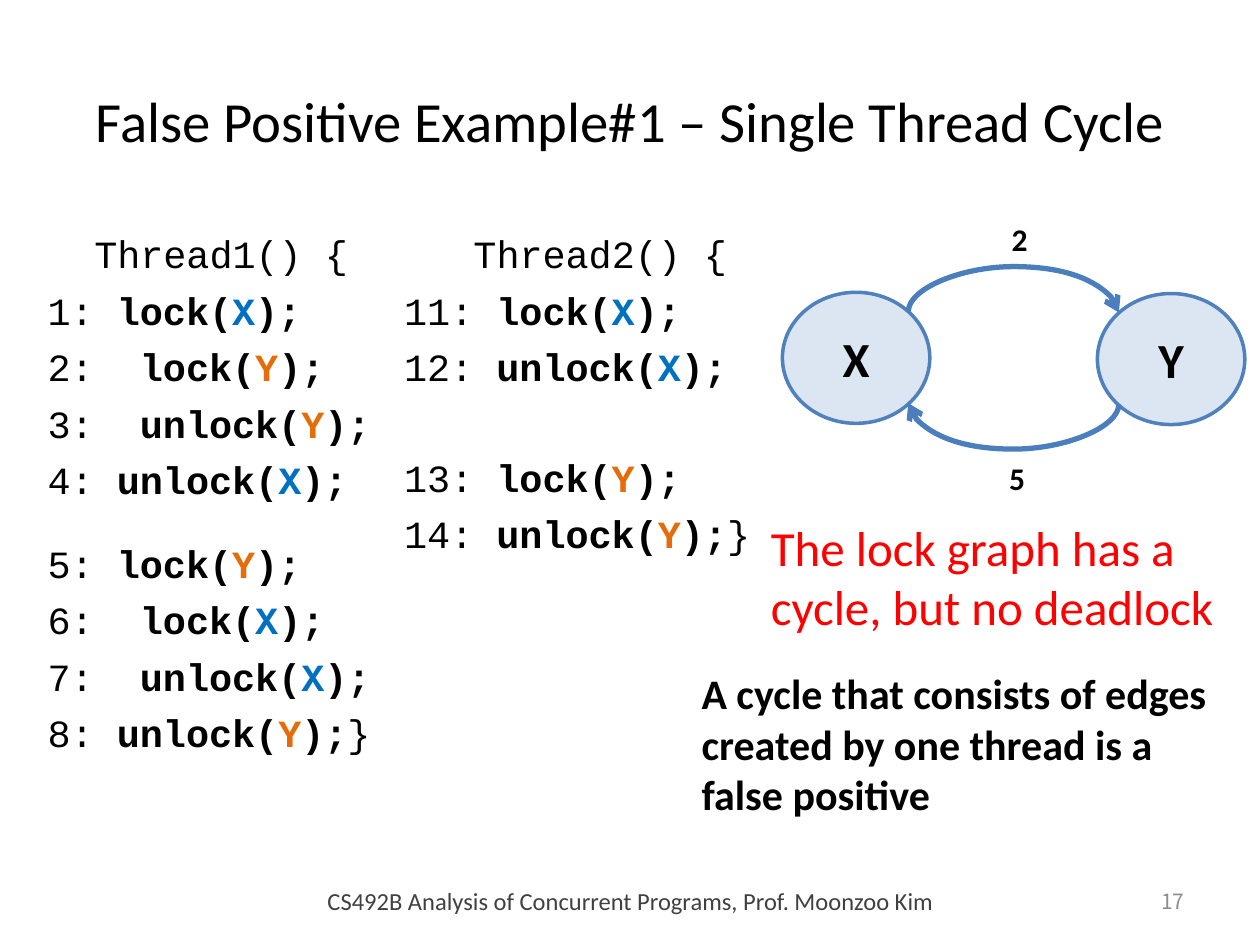
"""Build the slide on a false positive caused by a single-thread lock cycle."""
import pptx
import pptx.util
import pptx.dml.color
import pptx.enum.shapes
import pptx.enum.text
import pptx.oxml
import pptx.oxml.ns

Inches = pptx.util.Inches
Pt = pptx.util.Pt
Align = pptx.enum.text.PP_ALIGN
Anchor = pptx.enum.text.MSO_ANCHOR
Kind = pptx.enum.shapes.MSO_SHAPE
hue = pptx.dml.color.RGBColor.from_string


def write(para, text, color="000000", **form):
    """Add a run with the given font values."""
    run = para.add_run()
    run.text = text
    run.font.color.rgb = hue(color)
    for key, val in {"name": "Calibri", "bold": False, **form}.items():
        setattr(run.font, key, val)


def frame(shape, **form):
    """Set up a text frame and return its first paragraph."""
    text = shape.text_frame
    for key, val in {"word_wrap": True, **form}.items():
        setattr(text, key, val)
    return text.paragraphs[0]


deck = pptx.Presentation()
deck.slide_width, deck.slide_height = Inches(10), Inches(7.5)
slide = deck.slides.add_slide(deck.slide_layouts[5])
shapes = slide.shapes

title = shapes.title
place = {"left": 0.5, "top": 0.6, "width": 9, "height": 0.71}
for key, val in place.items():
    setattr(title, key, Inches(val))
para = frame(title, vertical_anchor=Anchor.MIDDLE,
             auto_size=pptx.enum.text.MSO_AUTO_SIZE.NONE)
para.alignment = Align.CENTER
write(para, "False Positive Example#1 – Single Thread Cycle", size=Pt(32.4))

tints = {"X": "0070C0", "Y": "E46C0A"}
threads = [
    (0.28, 3.15, "Thread1() {", 0.37, {"5": 21.3},
     ["1: lock(X);", "2:  lock(Y);", "3:  unlock(Y);", "4: unlock(X);",
      "5: lock(Y);", "6:  lock(X);", "7:  unlock(X);", "8: unlock(Y);}"]),
    (3.11, 3.2, "Thread2() {", 0.55, {"13": 36.8},
     ["11: lock(X);", "12: unlock(X);", "13: lock(Y);", "14: unlock(Y);}"]),
]
mono = {"name": "Courier New", "size": Pt(22)}
for left, width, head, dent, gaps, lines in threads:
    code = shapes.add_textbox(Inches(left), Inches(1.78), Inches(width), Inches(4.84))
    para = frame(code)
    para.space_before = Pt(5.9)
    para._p.get_or_add_pPr().set("marL", str(Inches(dent)))
    write(para, head, **mono)
    for line in lines:
        num, call = line.split(":")
        verb, rest = call.split("(")
        para = code.text_frame.add_paragraph()
        para.space_before = Pt(gaps.get(num, 5.9))
        write(para, num + ":", **mono)
        write(para, verb + "(", **{**mono, "bold": True})
        write(para, rest[0], tints[rest[0]], **{**mono, "bold": True})
        write(para, ");", **{**mono, "bold": True})
        if rest.endswith("}"):
            write(para, "}", **mono)

for name, left, top in [("X", 6.21, 2.32), ("Y", 8.71, 2.33)]:
    node = shapes.add_shape(Kind.OVAL, Inches(left), Inches(top), Inches(1.17), Inches(1.04))
    node.shadow.inherit = False
    node.fill.solid()
    node.fill.fore_color.rgb = hue("DCE6F2")
    node.line.color.rgb = hue("4F81BD")
    node.line.width = Pt(2)
    para = frame(node, vertical_anchor=Anchor.MIDDLE)
    para.alignment = Align.CENTER
    write(para, name, size=Pt(28), bold=True)

for top, turn in [(1.64, 270), (2.37, 90)]:
    edge = shapes.add_connector(
        pptx.enum.shapes.MSO_CONNECTOR.CURVE,
        Inches(8.05), Inches(top), Inches(8.04), Inches(top + 1.67))
    edge.line.color.rgb = hue("4B7EBC")
    edge.line.width = Pt(3)
    prop = edge._element.spPr
    prop.xfrm.set("rot", str(turn * 60000))
    guide = pptx.oxml.parse_xml(
        f'<a:gd {pptx.oxml.ns.nsdecls("a")} name="adj1" fmla="val -3600000"/>')
    prop.prstGeom.get_or_add_avLst().append(guide)
    edge.line._get_or_add_ln().append(pptx.oxml.parse_xml(
        f'<a:tailEnd {pptx.oxml.ns.nsdecls("a")} type="arrow"/>'))
    prop.append(pptx.oxml.parse_xml(f'<a:effectLst {pptx.oxml.ns.nsdecls("a")}/>'))

bold = {"bold": True}
notes = [
    (7.93, 1.7, 0.43, 0.4, "2", 18, "000000", bold, Align.LEFT, Anchor.TOP),
    (7.91, 3.59, 0.75, 0.4, "5", 18, "000000", bold, Align.LEFT, Anchor.TOP),
    (6.02, 4.06, 3.94, 1.04, "The lock graph has a cycle, but no deadlock",
     28, "FF0000", {}, Align.LEFT, Anchor.TOP),
    (5.47, 5.25, 4.37, 1.31,
     "A cycle that consists of edges created by one thread is a false positive",
     24, "000000", bold, Align.LEFT, Anchor.TOP),
    (8.46, 6.95, 1.04, 0.4, "17", 12, "8C8C8C",
     {"name": "Noto Sans CJK KR"}, Align.RIGHT, Anchor.MIDDLE),
    (2.09, 6.95, 5.83, 0.4, "CS492B Analysis of Concurrent Programs, Prof. Moonzoo Kim",
     14, "404040", {}, Align.CENTER, Anchor.MIDDLE),
]
for left, top, width, height, text, size, color, form, align, anchor in notes:
    note = shapes.add_textbox(Inches(left), Inches(top), Inches(width), Inches(height))
    para = frame(note, vertical_anchor=anchor)
    para.alignment = align
    write(para, text, color, size=Pt(size), **form)

deck.save("out.pptx")
